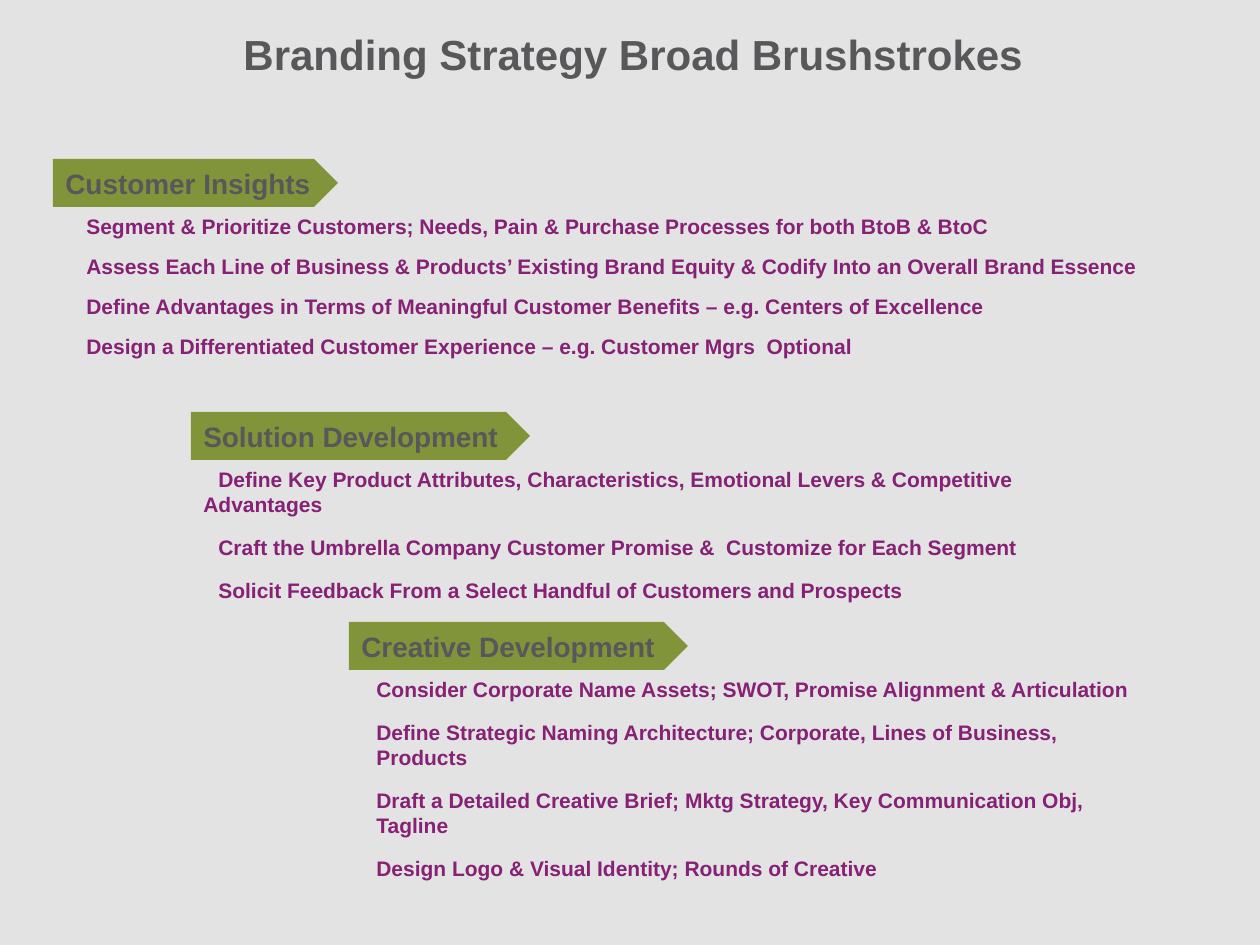
from dataclasses import dataclass

from pptx import Presentation
from pptx.dml.color import RGBColor
from pptx.enum.shapes import MSO_SHAPE
from pptx.enum.text import MSO_ANCHOR, PP_ALIGN
from pptx.util import Emu, Pt

EMU_PER_PX = 914400 / 126


@dataclass(frozen=True)
class Theme:
    """Colours, font and type sizes of the slide."""
    font: str = "Arial"
    background: str = "E3E3E3"
    heading: str = "58585A"
    banner: str = "81943A"
    detail: str = "862175"
    title_size: int = 24
    banner_size: int = 16
    detail_size: int = 12


THEME = Theme()
BANNER_HEIGHT = 48

SECTIONS = [
    {
        "name": "Customer Insights",
        "left": 53, "top": 159, "banner_width": 285,
        "list_width": 1155, "list_height": 170,
        "margin": 21, "indent": 0, "gap": 8.5,
        "items": [
            "Segment & Prioritize Customers; Needs, Pain & Purchase Processes for both BtoB & BtoC",
            "Assess Each Line of Business & Products’ Existing Brand Equity & Codify Into an Overall Brand Essence",
            "Define Advantages in Terms of Meaningful Customer Benefits – e.g. Centers of Excellence",
            "Design a Differentiated Customer Experience – e.g. Customer Mgrs  Optional",
        ],
    },
    {
        "name": "Solution Development",
        "left": 191, "top": 412, "banner_width": 339,
        "list_width": 954, "list_height": 125,
        "margin": 0, "indent": 15, "gap": 10.1,
        "items": [
            "Define Key Product Attributes, Characteristics, Emotional Levers & Competitive Advantages",
            "Craft the Umbrella Company Customer Promise &  Customize for Each Segment",
            "Solicit Feedback From a Select Handful of Customers and Prospects",
        ],
    },
    {
        "name": "Creative Development",
        "left": 349, "top": 622, "banner_width": 339,
        "list_width": 810, "list_height": 168,
        "margin": 15, "indent": 0, "gap": 10.1,
        "items": [
            "Consider Corporate Name Assets; SWOT, Promise Alignment & Articulation",
            "Define Strategic Naming Architecture; Corporate, Lines of Business, Products",
            "Draft a Detailed Creative Brief; Mktg Strategy, Key Communication Obj, Tagline",
            "Design Logo & Visual Identity; Rounds of Creative",
        ],
    },
]


def px(length):
    """Turn pixels into EMU."""
    return Emu(round(length * EMU_PER_PX))


def apply_format(target, values):
    """Set each attribute of the target from a dict."""
    for name, value in values.items():
        setattr(target, name, value)


def write_paragraph(para, text, size, color):
    """Write one bold, left-aligned paragraph."""
    para.alignment = PP_ALIGN.LEFT
    span = para.add_run()
    span.text = text
    apply_format(span.font, {"name": THEME.font, "size": Pt(size), "bold": True})
    span.font.color.rgb = RGBColor.from_string(color)


def add_title(slide, text):
    """Add the slide title."""
    frame = slide.shapes.add_textbox(px(231), px(0), px(1029), px(116)).text_frame
    apply_format(frame, {"word_wrap": True, "vertical_anchor": MSO_ANCHOR.MIDDLE,
                         "margin_top": 0, "margin_bottom": 0})
    para = frame.paragraphs[0]
    para.line_spacing = 0.8
    write_paragraph(para, text, THEME.title_size, THEME.heading)


def add_banner(slide, section):
    """Add the pentagon banner that names a section."""
    banner = slide.shapes.add_shape(
        MSO_SHAPE.PENTAGON, px(section["left"]), px(section["top"]),
        px(section["banner_width"]), px(BANNER_HEIGHT))
    banner.adjustments[0] = 0.5
    banner.shadow.inherit = False
    banner.fill.solid()
    banner.fill.fore_color.rgb = RGBColor.from_string(THEME.banner)
    banner.line.fill.background()
    frame = banner.text_frame
    apply_format(frame, {"word_wrap": False, "vertical_anchor": MSO_ANCHOR.MIDDLE})
    write_paragraph(frame.paragraphs[0], section["name"],
                    THEME.banner_size, THEME.heading)


def add_details(slide, section):
    """Add the list of steps below a section banner."""
    box = slide.shapes.add_textbox(
        px(section["left"]), px(section["top"] + BANNER_HEIGHT),
        px(section["list_width"]), px(section["list_height"]))
    frame = box.text_frame
    frame.word_wrap = True
    for index, item in enumerate(section["items"]):
        para = frame.add_paragraph() if index else frame.paragraphs[0]
        if index:
            para.space_before = Pt(section["gap"])
        properties = para._p.get_or_add_pPr()
        properties.set("marL", str(px(section["margin"])))
        properties.set("indent", str(px(section["indent"])))
        write_paragraph(para, item, THEME.detail_size, THEME.detail)


def main():
    """Build and save the slide."""
    deck = Presentation()
    apply_format(deck, {"slide_width": px(1260), "slide_height": px(945)})
    slide = deck.slides.add_slide(deck.slide_layouts[6])
    slide.background.fill.solid()
    slide.background.fill.fore_color.rgb = RGBColor.from_string(THEME.background)
    add_title(slide, "Branding Strategy Broad Brushstrokes")
    for section in SECTIONS:
        add_banner(slide, section)
        add_details(slide, section)
    deck.save("out.pptx")


if __name__ == "__main__":
    main()
